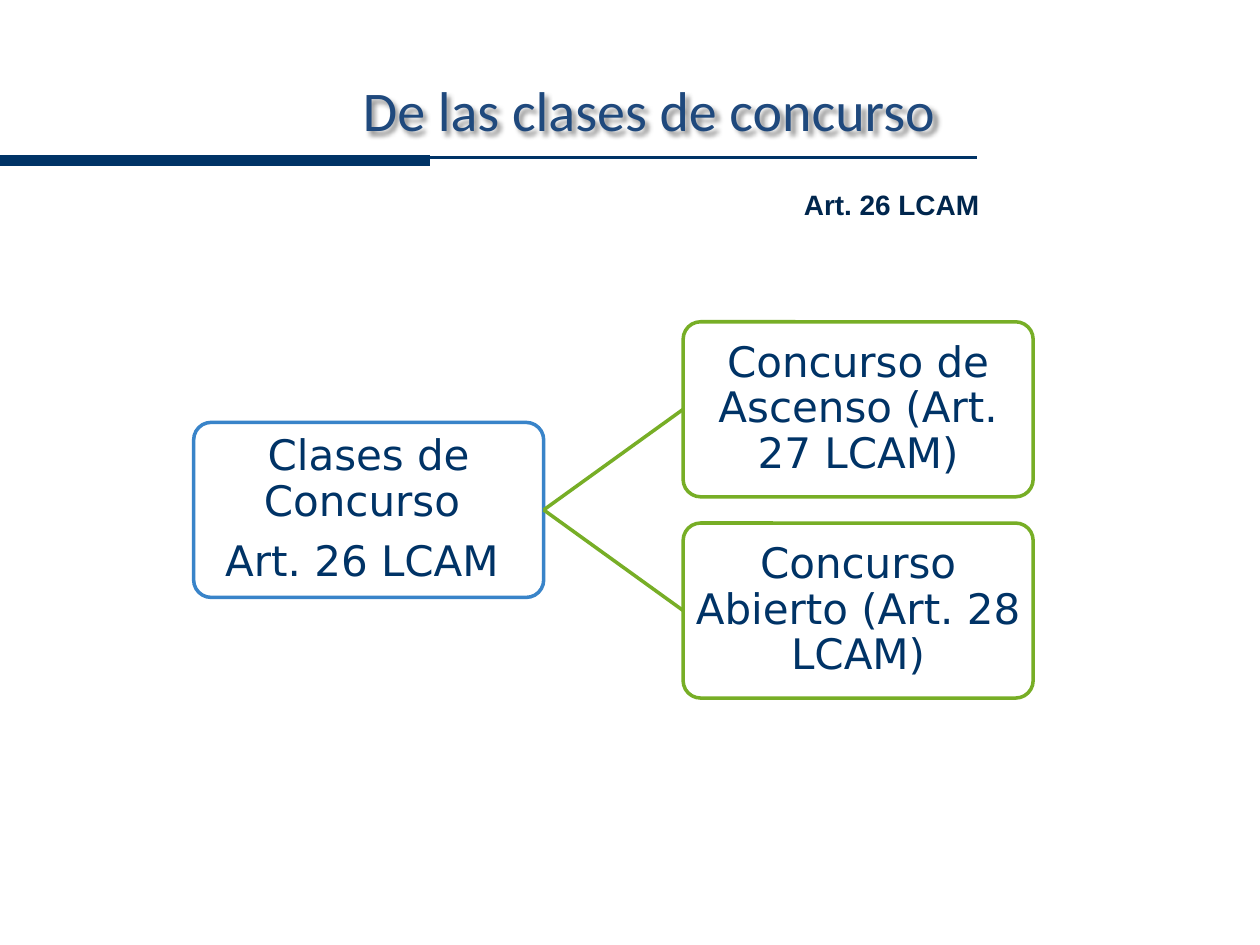
from lxml import etree
from pptx import Presentation
from pptx import util as u
from pptx.dml.color import RGBColor
from pptx.enum import shapes, text
from pptx.oxml import parse_xml
from pptx.oxml.ns import nsdecls, qn

Pt = u.Pt
COLOURS = {"navy": "003366", "title": "1F497D", "article": "00264D",
           "white": "FFFFFF", "blue": "3984C9", "green": "77AE26"}
ALIGN = text.PP_ALIGN


def colour(name):
    return RGBColor.from_string(COLOURS[name])


class SlideBuilder:
    """Holds the style and the current slide."""
    node_font = {"name": "DejaVu Sans", "size": Pt(24)}
    node_paragraph = {"alignment": ALIGN.CENTER, "line_spacing": 0.9, "space_after": Pt(8.4)}
    node_size = (200, 100)

    def __init__(self, slide):
        self.slide = slide

    def fill_text(self, frame, lines, ink, font, paragraph):
        for i, line in enumerate(lines):
            p = frame.paragraphs[0] if i == 0 else frame.add_paragraph()
            p.text = line
            for target, values in ((p, paragraph), (p.font, font)):
                for key, value in values.items():
                    setattr(target, key, value)
            p.font.color.rgb = colour(ink)

    def label(self, box, words, ink, font, align, wrap=True):
        label = self.slide.shapes.add_textbox(*map(Pt, box))
        label.text_frame.word_wrap = wrap
        self.fill_text(label.text_frame, [words], ink, font, {"alignment": align})
        return label

    def soft_shadow(self, shape):
        shape._element.spPr.append(parse_xml(
            f'<a:effectLst {nsdecls("a")}><a:outerShdw blurRad="38100" dist="38100" '
            'dir="2700000" algn="tl"><a:srgbClr val="000000"><a:alpha val="43000"/>'
            '</a:srgbClr></a:outerShdw></a:effectLst>'))

    def node(self, left, middle, lines, edge):
        width, height = self.node_size
        node = self.slide.shapes.add_shape(
            shapes.MSO_SHAPE.ROUNDED_RECTANGLE,
            Pt(left), Pt(middle - height / 2), Pt(width), Pt(height))
        node.adjustments[0] = 0.1
        node.shadow.inherit = False
        node.fill.solid()
        node.fill.fore_color.rgb = colour("white")
        node.line.color.rgb = colour(edge)
        node.line.width = Pt(2)
        frame = node.text_frame
        frame.word_wrap = True
        frame.vertical_anchor = text.MSO_ANCHOR.MIDDLE
        for side in ("left", "top", "right", "bottom"):
            setattr(frame, f"margin_{side}", Pt(1.4))
        self.fill_text(frame, lines, "navy", self.node_font, self.node_paragraph)
        return node

    def line(self, start, end, ink, width):
        line = self.slide.shapes.add_connector(
            shapes.MSO_CONNECTOR.STRAIGHT, *map(Pt, (*start, *end)))
        line.line.color.rgb = colour(ink)
        line.line.width = Pt(width)
        etree.SubElement(line._element.spPr, qn("a:effectLst"))
        return line

    def branch(self, parent, child):
        link = self.line((0, 0), (1, 1), "green", 2)
        link.begin_connect(parent, 3)
        link.end_connect(child, 1)


def main():
    deck = Presentation()
    deck.slide_width, deck.slide_height = Pt(720), Pt(540)
    build = SlideBuilder(deck.slides.add_slide(deck.slide_layouts[6]))

    # Header rule, thick on the left
    build.line((558, 90), (0, 90), "navy", 1.5)
    build.line((0, 91.7), (246, 91.7), "navy", 6)

    # Title and article reference
    title = build.label((154, 39.6, 434, 49), "De las clases de concurso", "title",
                        {"name": "Calibri", "size": Pt(32)}, ALIGN.CENTER)
    build.soft_shadow(title)
    build.label((450.7, 103.7, 116, 26.6), "Art. 26 LCAM", "article",
                {"name": "Arial", "size": Pt(16), "bold": True}, ALIGN.RIGHT, wrap=False)

    # Tree: classes of contest, children spread evenly about the root
    centre, pitch = 291.4, 115
    root = build.node(110.7, centre, ["Clases de Concurso ", "Art. 26 LCAM "], "blue")
    contests = ["Concurso de Ascenso (Art. 27 LCAM)", "Concurso Abierto (Art. 28 LCAM)"]
    for i, contest in enumerate(contests):
        middle = centre + (i - (len(contests) - 1) / 2) * pitch
        build.branch(root, build.node(390.4, middle, [contest], "green"))

    deck.save("out.pptx")


if __name__ == "__main__":
    main()
